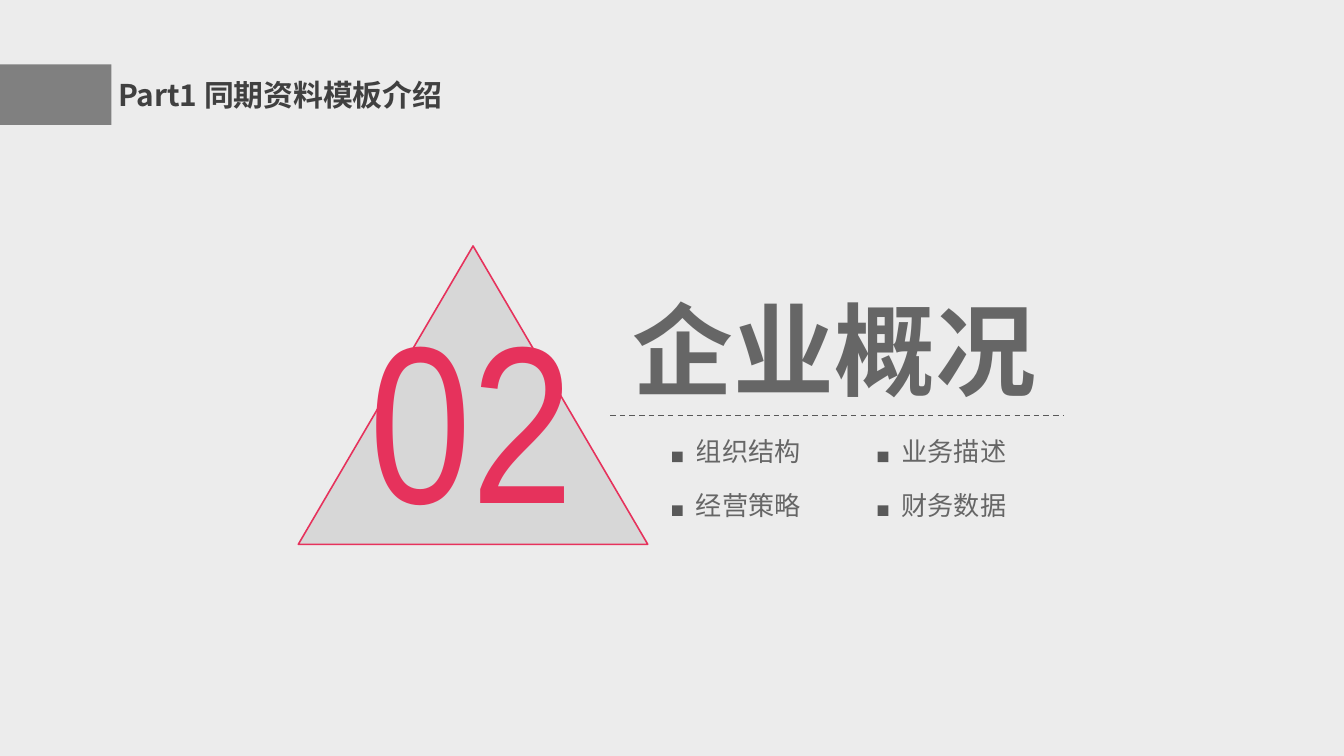
from pptx import Presentation
from pptx.dml.color import RGBColor
from pptx.enum.dml import MSO_LINE
from pptx.enum.shapes import MSO_CONNECTOR, MSO_SHAPE
from pptx.enum.text import MSO_ANCHOR, MSO_AUTO_SIZE
from pptx.oxml.ns import qn
from pptx.util import Inches, Pt
from lxml.etree import SubElement

COLORS = {
    "back": "ECECEC",
    "band": "808080",
    "gray": "595959",
    "dark": "404040",
    "rose": "E6325C",
}
SANS = "Noto Sans CJK SC"
COLS = 100  # square cells, a tenth of an inch each
ROWS = COLS * 9 / 16


def fade(fill, alpha):
    """Set the opacity of a solid fill, in percent."""
    color = fill._xPr.find(qn("a:solidFill"))[0]
    SubElement(color, qn("a:alpha")).set("val", str(alpha * 1000))


def write(frame, text, size=14, font=SANS, color="gray", bold=False, alpha=100):
    run = frame.paragraphs[0].add_run()
    run.text = text
    run.font.size, run.font.bold, run.font.name = Pt(size), bold, font
    run.font.fill.solid()
    run.font.fill.fore_color.rgb = RGBColor.from_string(COLORS[color])
    if alpha < 100:
        fade(run.font.fill, alpha)
    SubElement(run._r.get_or_add_rPr(), qn("a:ea")).set("typeface", font)


class Deck:
    def __init__(self):
        self.prs = Presentation()
        self.prs.slide_width = Inches(10)
        self.prs.slide_height = self.prs.slide_width * 9 // 16
        self.slide = self.prs.slides.add_slide(self.prs.slide_layouts[6])
        fill = self.slide.background.fill
        fill.solid()
        fill.fore_color.rgb = self.hue("back")

    def hue(self, name):
        return RGBColor.from_string(COLORS[name])

    def place(self, x, y, w, h):
        """Turn columns and rows into slide lengths."""
        wide, high = self.prs.slide_width / COLS, self.prs.slide_height / ROWS
        return [round(n) for n in (x * wide, y * high, w * wide, h * high)]

    def shape(self, kind, *area, fill, alpha=100, line=None):
        item = self.slide.shapes.add_shape(kind, *self.place(*area))
        item.shadow.inherit = False
        item.fill.solid()
        item.fill.fore_color.rgb = self.hue(fill)
        if alpha < 100:
            fade(item.fill, alpha)
        if line:
            item.line.color.rgb = self.hue(line)
            item.line.width = Pt(0.85)
        else:
            item.line.fill.background()

    def label(self, text, *area, wrap=False, anchor=MSO_ANCHOR.TOP, **style):
        frame = self.slide.shapes.add_textbox(*self.place(*area)).text_frame
        frame.word_wrap = wrap
        frame.vertical_anchor = anchor
        if not wrap:
            frame.auto_size = MSO_AUTO_SIZE.SHAPE_TO_FIT_TEXT
        write(frame, text, **style)

    def rule(self, x, y, w):
        """Draw a dashed level line."""
        left, top, width, _ = self.place(x, y, w, 0)
        item = self.slide.shapes.add_connector(
            MSO_CONNECTOR.STRAIGHT, left, top, left + width, top)
        item.line.color.rgb = self.hue("gray")
        item.line.width = Pt(0.75)
        item.line.dash_style = MSO_LINE.DASH
        SubElement(item._element.spPr, qn("a:effectLst"))

    def topic(self, text, x, y):
        """Draw a square marker with its label."""
        self.shape(MSO_SHAPE.RECTANGLE, x, y + 1.7, 0.8, 0.8, fill="gray")
        self.label(text, x + 0.8, y, 9.9, 3.4, alpha=91)


def main():
    deck = Deck()
    deck.shape(MSO_SHAPE.RECTANGLE, 0, 4.8, 8.3, 4.5, fill="band")
    deck.shape(MSO_SHAPE.ISOSCELES_TRIANGLE, 22.2, 18.3, 26, 22.2,
               fill="gray", alpha=14, line="rose")
    deck.label("02", 26.5, 20.3, 19.5, 21.2,
               size=120, font="Arial Narrow", color="rose")
    deck.label("企业概况", 46.1, 20.9, 32.3, 10.1, size=54, bold=True, alpha=91)
    deck.rule(45.4, 30.9, 33.7)
    topics = ("组织结构", "业务描述", "经营策略", "财务数据")
    for i, text in enumerate(topics):
        row, col = divmod(i, 2)
        deck.topic(text, 50 + col * 15.3, 31.9 + row * 4)
    deck.label("Part1 同期资料模板介绍", 7.8, 4.7, 32.8, 4.7, wrap=True,
               anchor=MSO_ANCHOR.MIDDLE, size=16, color="dark", bold=True)
    deck.prs.save("out.pptx")


if __name__ == "__main__":
    main()
